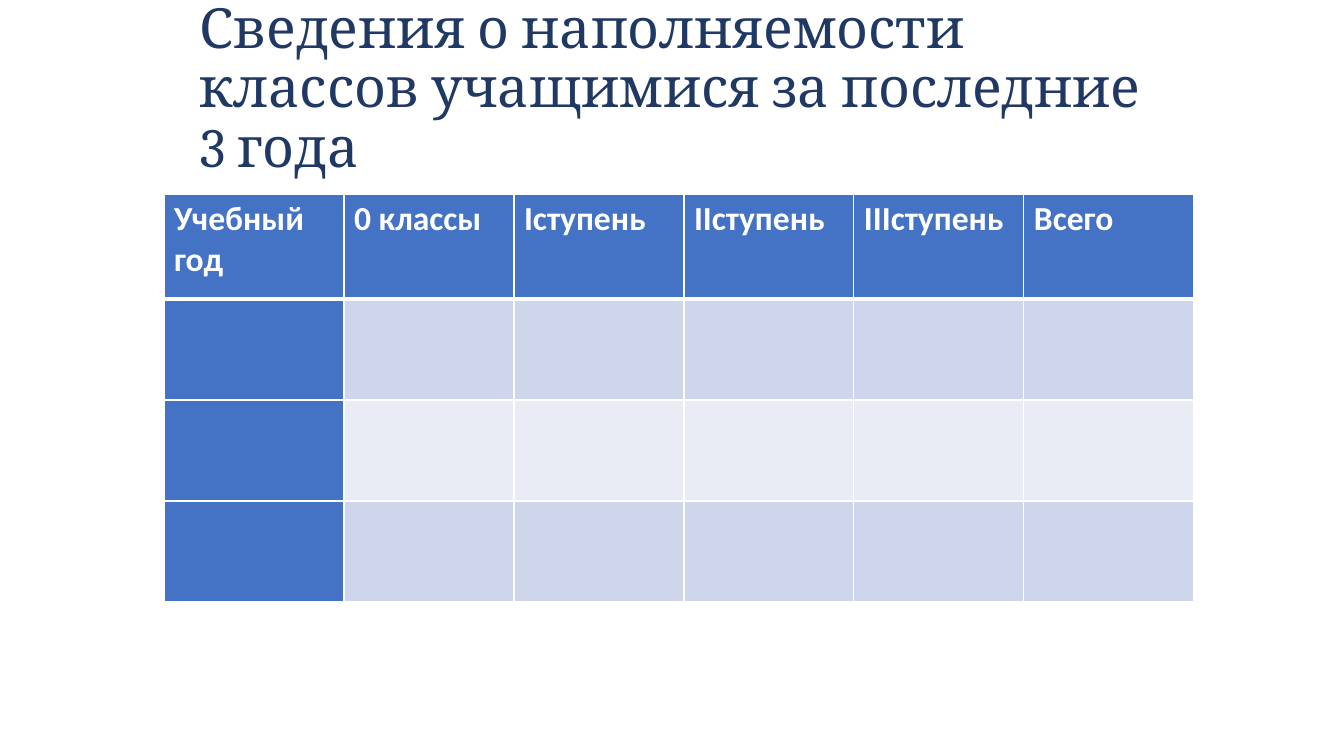
from lxml.etree import SubElement as Sub
from pptx import Presentation
from pptx.dml.color import RGBColor as RGB
from pptx.enum.text import MSO_ANCHOR as Anchor
from pptx.oxml.ns import qn
from pptx.util import Pt

NAVY = RGB(0x20, 0x38, 0x64)
BLUE = RGB(0x44, 0x72, 0xC4)
DARK = RGB(0xCF, 0xD5, 0xEA)
PALE = RGB(0xE9, 0xEB, 0xF5)
WHITE = RGB(0xFF, 0xFF, 0xFF)

TITLE = "Сведения о наполняемости классов учащимися за последние 3 года"
HEADS = ["Учебный год", "0 классы", "Iступень", "IIступень", "IIIступень", "Всего"]
COLS = [180] + [170] * 5
ROWS = [105] + [101] * 3


def px(num):
    return round(num * 914400 / 100.8)


class Deck:
    title = dict(name="Cambria", size=Pt(39.6))
    head = dict(name="Calibri", size=Pt(24), bold=True)

    def __init__(self, wide, high):
        self.prs = Presentation()
        self.prs.slide_width, self.prs.slide_height = px(wide), px(high)
        self.slide = self.prs.slides.add_slide(self.prs.slide_layouts[6])

    def style(self, para, form, color):
        for key, value in form.items():
            setattr(para.font, key, value)
        para.font.color.rgb = color

    def text(self, box, words):
        frame = self.slide.shapes.add_textbox(*map(px, box)).text_frame
        frame.word_wrap = True
        frame.vertical_anchor = Anchor.MIDDLE
        para = frame.paragraphs[0]
        para.text = words
        para.line_spacing = 0.9
        self.style(para, self.title, NAVY)

    def border(self, cell, sides):
        props = cell._tc.get_or_add_tcPr()
        for side, width in sides.items():
            line = Sub(props, qn(f"a:ln{side}"), w=str(Pt(width)))
            Sub(Sub(line, qn("a:solidFill")), qn("a:srgbClr"), val=str(WHITE))

    def table(self, left, top, cols, rows, heads):
        box = map(px, (left, top, sum(cols), sum(rows)))
        grid = self.slide.shapes.add_table(len(rows), len(cols), *box).table
        grid.first_col = True
        for col, wide in zip(grid.columns, cols):
            col.width = px(wide)
        for r, high in enumerate(rows):
            grid.rows[r].height = px(high)
            for c in range(len(cols)):
                cell = grid.cell(r, c)
                self.border(cell, dict(L=1, R=1, T=3 if r == 1 else 1, B=3 if r == 0 else 1))
                cell.fill.solid()
                cell.fill.fore_color.rgb = BLUE if r == 0 or c == 0 else DARK if r % 2 else PALE
                para = cell.text_frame.paragraphs[0]
                if r == 0:
                    para.text = heads[c]
                    self.style(para, self.head, WHITE)


def main():
    deck = Deck(1344, 756)
    deck.text((190, 20, 966, 140), TITLE)
    deck.table(164, 194, COLS, ROWS, HEADS)
    deck.prs.save("out.pptx")


if __name__ == "__main__":
    main()
